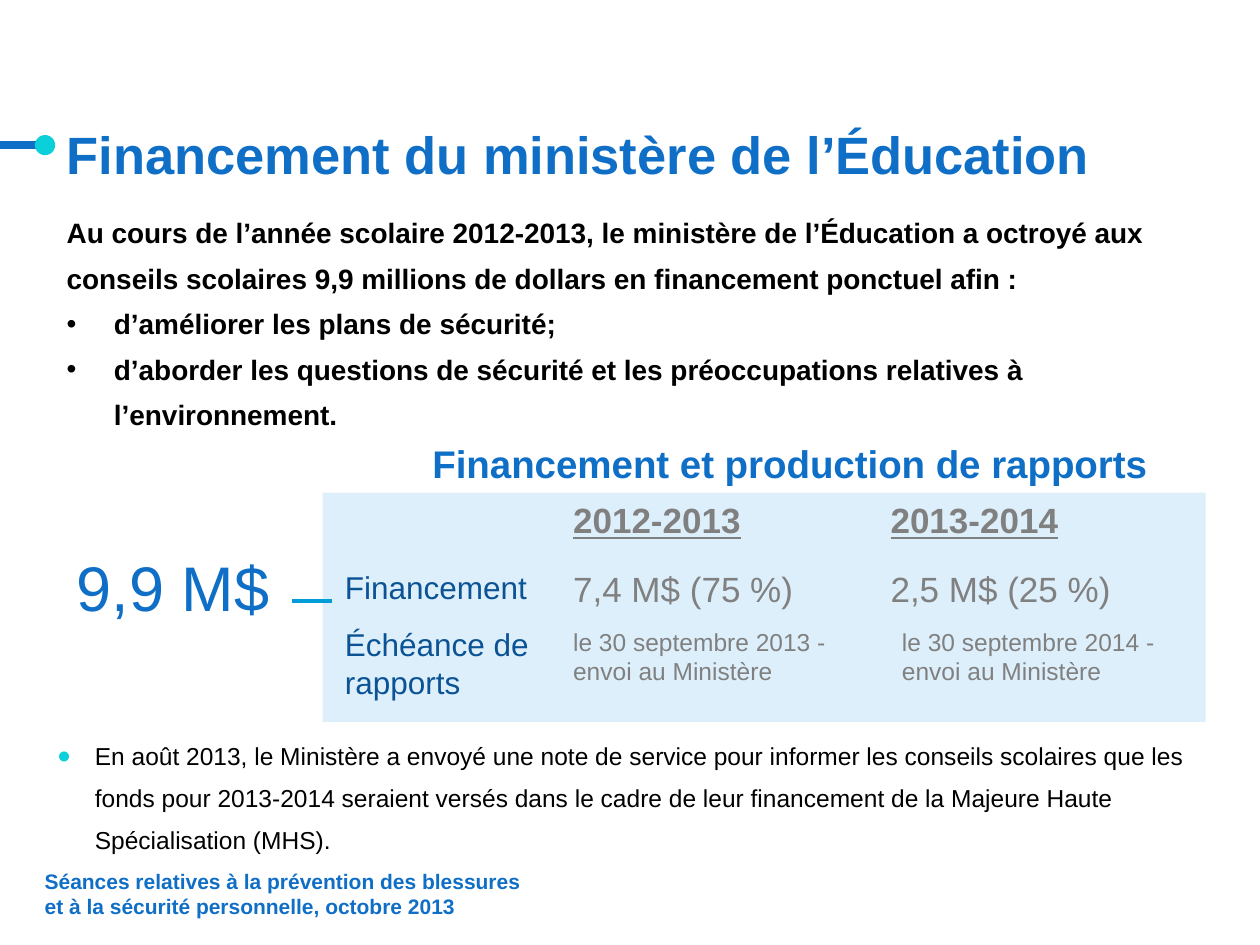
from lxml import etree
from pptx import Presentation
from pptx.dml.color import RGBColor
from pptx.enum.shapes import MSO_CONNECTOR, MSO_SHAPE
from pptx.enum.text import MSO_ANCHOR
from pptx.oxml.ns import qn
from pptx.util import Pt

STRAIGHT = MSO_CONNECTOR.STRAIGHT
RECTANGLE, OVAL = MSO_SHAPE.RECTANGLE, MSO_SHAPE.OVAL
TOP, BOTTOM = MSO_ANCHOR.TOP, MSO_ANCHOR.BOTTOM

COLORS = {"blue": "0F6FC6", "aqua": "0BD0D9", "sky": "009DD9", "panel": "DDEFFB",
          "navy": "0B5394", "gray": "808080", "black": "000000"}

FORMATS = {
    "title": {"size": 30, "bold": True, "color": "blue"},
    "heading": {"size": 22, "bold": True, "color": "blue"},
    "intro": {"size": 16, "bold": True, "color": "black"},
    "footer": {"size": 12, "bold": True, "color": "blue"},
    "total": {"size": 36, "color": "blue"},
    "year": {"size": 20, "bold": True, "underline": True, "color": "gray"},
    "amount": {"size": 20, "color": "gray"},
    "deadline": {"size": 14, "color": "gray"},
    "label": {"size": 18, "color": "navy"},
    "note": {"size": 14, "color": "black"},
}

TITLE = "Financement du ministère de l’Éducation"
HEADING = "Financement et production de rapports"
TOTAL = "9,9 M$"
INTRO = "Au cours de l’année scolaire 2012-2013, le ministère de l’Éducation a octroyé aux conseils scolaires 9,9 millions de dollars en financement ponctuel afin :"
GOALS = [
    "d’améliorer les plans de sécurité;",
    "d’aborder les questions de sécurité et les préoccupations relatives à l’environnement.",
]
NOTE = "En août 2013, le Ministère a envoyé une note de service pour informer les conseils scolaires que les fonds pour 2013-2014 seraient versés dans le cadre de leur financement de la Majeure Haute Spécialisation (MHS)."
FOOTER = "Séances relatives à la prévention des blessures et à la sécurité personnelle, octobre 2013"

LABELS = [("Financement", 321, 29), ("Échéance de rapports", 353.5, 51)]
YEARS = [
    {"year": "2012-2013", "amount": "7,4 M$ (75 %)",
     "deadline": "le 30 septembre 2013 - envoi au Ministère"},
    {"year": "2013-2014", "amount": "2,5 M$ (25 %)",
     "deadline": "le 30 septembre 2014 - envoi au Ministère"},
]
YEAR_LEFT, YEAR_STEP = 320.4, 181.4
ROWS = {"year": (281.5, 32), "amount": (321, 32), "deadline": (354.5, 41)}
DEADLINE_SHIFT = 6.5

GOAL_BULLET = {"char": "•", "indent": 27}
NOTE_BULLET = {"char": "●", "indent": 21.6, "color": "aqua", "percent": 95}


def rgb(name):
    return RGBColor.from_string(COLORS[name])


def add_bullet(para, bullet):
    props = para._p.get_or_add_pPr()
    indent = Pt(bullet["indent"])
    props.set("marL", str(indent))
    props.set("indent", str(-indent))
    if "color" in bullet:
        holder = etree.SubElement(props, qn("a:buClr"))
        etree.SubElement(holder, qn("a:srgbClr"), val=COLORS[bullet["color"]])
        etree.SubElement(props, qn("a:buSzPct"), val=str(bullet["percent"] * 1000))
    etree.SubElement(props, qn("a:buFont"), typeface="Arial")
    etree.SubElement(props, qn("a:buChar"), char=bullet["char"])


def add_text(page, bounds, paragraphs, style, insets=(7.2, 3.6, 7.2, 3.6),
             anchor=TOP, spacing=None):
    box = page.shapes.add_textbox(*map(Pt, bounds))
    frame = box.text_frame
    frame.word_wrap = True
    frame.vertical_anchor = anchor
    for side, inset in zip(("left", "top", "right", "bottom"), insets):
        setattr(frame, f"margin_{side}", Pt(inset))
    for number, (text, bullet) in enumerate(paragraphs):
        para = frame.add_paragraph() if number else frame.paragraphs[0]
        if bullet:
            add_bullet(para, bullet)
        if spacing:
            para.line_spacing = Pt(spacing)
        span = para.add_run()
        span.text = text
        span.font.name = "Arial"
        for key, value in FORMATS[style].items():
            if key == "color":
                span.font.color.rgb = rgb(value)
            else:
                setattr(span.font, key, Pt(value) if key == "size" else value)


def add_block(page, kind, bounds, color):
    shape = page.shapes.add_shape(kind, *map(Pt, bounds))
    shape.shadow.inherit = False
    shape.fill.solid()
    shape.fill.fore_color.rgb = rgb(color)
    shape.line.fill.background()


def add_rule(page, left, right, y, color, width):
    rule = page.shapes.add_connector(STRAIGHT, Pt(left), Pt(y), Pt(right), Pt(y))
    rule.line.color.rgb = rgb(color)
    rule.line.width = Pt(width)
    etree.SubElement(rule._element.spPr, qn("a:effectLst"))


def main():
    deck = Presentation()
    deck.slide_width, deck.slide_height = Pt(720), Pt(540)
    page = deck.slides.add_slide(deck.slide_layouts[6])

    add_rule(page, 0, 25.5, 83, "blue", 4.75)
    add_block(page, OVAL, (20, 77.2, 11.5, 11.5), "aqua")
    add_text(page, (38, 60.5, 648, 45.5), [(TITLE, None)], "title",
             insets=(0, 3.6, 0, 0), anchor=BOTTOM)
    add_text(page, (31, 113, 663, 160.5),
             [(INTRO, None)] + [(goal, GOAL_BULLET) for goal in GOALS],
             "intro", spacing=26)
    add_text(page, (240, 247.7, 426, 39.6), [(HEADING, None)], "heading")

    add_text(page, (36.7, 309.6, 141, 51), [(TOTAL, None)], "total")
    add_block(page, RECTANGLE, (184.3, 281.5, 504.7, 131), "panel")
    add_rule(page, 167, 190, 343.5, "sky", 2.75)
    for text, top, height in LABELS:
        add_text(page, (190, top, 136, height), [(text, None)], "label")
    for column, entry in enumerate(YEARS):
        for row, (top, height) in ROWS.items():
            left = YEAR_LEFT + column * YEAR_STEP
            if row == "deadline":
                left += column * DEADLINE_SHIFT
            add_text(page, (left, top, 181.4, height), [(entry[row], None)], row)

    add_text(page, (25.5, 412.5, 663, 84), [(NOTE, NOTE_BULLET)], "note", spacing=24)
    add_text(page, (25.5, 506, 284.5, 19), [(FOOTER, None)], "footer",
             insets=(0, 0, 0, 0), anchor=BOTTOM)
    deck.save("out.pptx")


if __name__ == "__main__":
    main()
